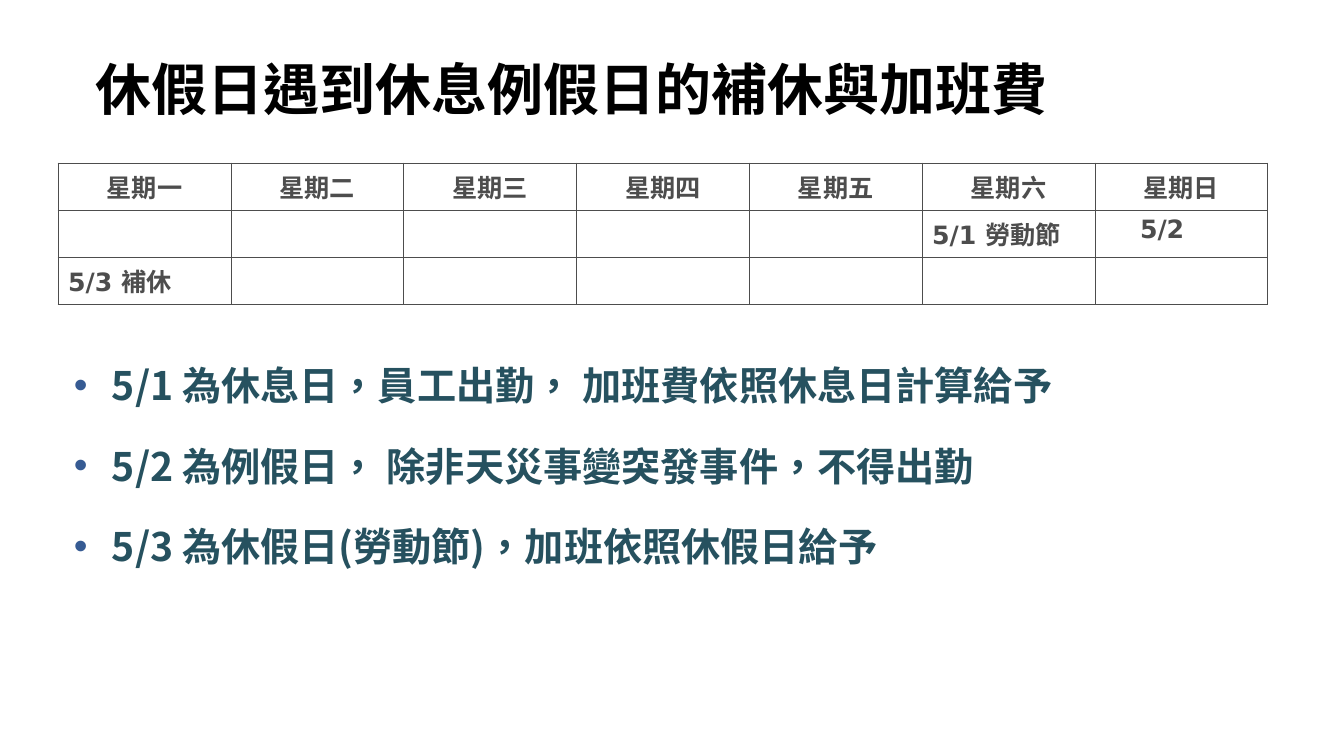
"""Build the slide on compensatory leave and overtime pay for holidays falling on rest days."""
from lxml import etree
from pptx import Presentation, util as u
from pptx.dml.color import RGBColor
from pptx.enum import lang, text
from pptx.oxml import ns

PX = 914400 / 100.8
BLACK = RGBColor(0x00, 0x00, 0x00)
GREY = RGBColor(0x4D, 0x4D, 0x4D)
TEAL = RGBColor(0x26, 0x51, 0x5F)
BLUE = RGBColor(0x36, 0x5B, 0x93)
CJK_FONT = "Noto Sans CJK SC"
TABLE_FONT = "DejaVu Sans"


def px(*lengths):
    return [u.Emu(round(length * PX)) for length in lengths]


def set_font(para, name, size, color):
    para.font.name = name
    para.font.size = u.Pt(size)
    para.font.bold = True
    para.font.color.rgb = color
    para.font.language_id = lang.MSO_LANGUAGE_ID.TRADITIONAL_CHINESE
    defaults = para._p.pPr.find(ns.qn("a:defRPr"))
    etree.SubElement(defaults, ns.qn("a:ea"), typeface=CJK_FONT)


deck = Presentation()
deck.slide_width, deck.slide_height = px(1344, 756)
page = deck.slides.add_slide(deck.slide_layouts[5])

title = page.shapes.title
title.left, title.top, title.width, title.height = px(90, 44, 1132, 88)
title.text_frame.text = "休假日遇到休息例假日的補休與加班費"
title.text_frame.vertical_anchor = text.MSO_ANCHOR.MIDDLE
title.text_frame.paragraphs[0].alignment = text.PP_ALIGN.LEFT
set_font(title.text_frame.paragraphs[0], CJK_FONT, 40, BLACK)

calendar_rows = [
    ["星期" + day for day in "一二三四五六日"],
    ["", "", "", "", "", "5/1 勞動節", "5/2"],
    ["5/3 補休", "", "", "", "", "", ""],
]
calendar = page.shapes.add_table(3, 7, *px(58, 163, 1211, 141)).table
calendar.first_row = calendar.horz_banding = False
for column in calendar.columns:
    column.width = px(1210 / 7)[0]
for row_index, labels in enumerate(calendar_rows):
    calendar.rows[row_index].height = px(47)[0]
    for column_index, label in enumerate(labels):
        cell = calendar.cell(row_index, column_index)
        cell.text = label
        para = cell.text_frame.paragraphs[0]
        if row_index == 0:
            para.alignment = text.PP_ALIGN.CENTER
        if label == "5/2":
            para._p.get_or_add_pPr().set("marL", str(px(35)[0]))
        set_font(para, TABLE_FONT, 18, GREY)
        for side in ("lnL", "lnR", "lnT", "lnB"):
            border = etree.SubElement(cell._tc.get_or_add_tcPr(), ns.qn("a:" + side), w=str(u.Pt(0.5)))
            paint = etree.SubElement(border, ns.qn("a:solidFill"))
            etree.SubElement(paint, ns.qn("a:srgbClr"), val=str(GREY))
        cell.fill.background()

rules = [
    "5/1 為休息日，員工出勤， 加班費依照休息日計算給予",
    "5/2 為例假日， 除非天災事變突發事件，不得出勤",
    "5/3 為休假日(勞動節)，加班依照休假日給予",
]
box = page.shapes.add_textbox(*px(64, 332, 1217, 371))
for frame in (title.text_frame, box.text_frame):
    frame.word_wrap = True
    frame.margin_left, frame.margin_top, frame.margin_right, frame.margin_bottom = px(6, 6, 10, 6)
for index, rule in enumerate(rules):
    para = box.text_frame.add_paragraph() if index else box.text_frame.paragraphs[0]
    para.text = rule
    para.line_spacing = 1.5
    para.space_before = u.Pt(7 if index else 0)
    props = para._p.get_or_add_pPr()
    props.set("marL", str(px(42)[0]))
    props.set("indent", str(px(-38)[0]))
    bullet_color = etree.SubElement(props, ns.qn("a:buClr"))
    etree.SubElement(bullet_color, ns.qn("a:srgbClr"), val=str(BLUE))
    etree.SubElement(props, ns.qn("a:buFont"), typeface="Arial")
    etree.SubElement(props, ns.qn("a:buChar"), char="•")
    set_font(para, CJK_FONT, 28, TEAL)

deck.save("out.pptx")
